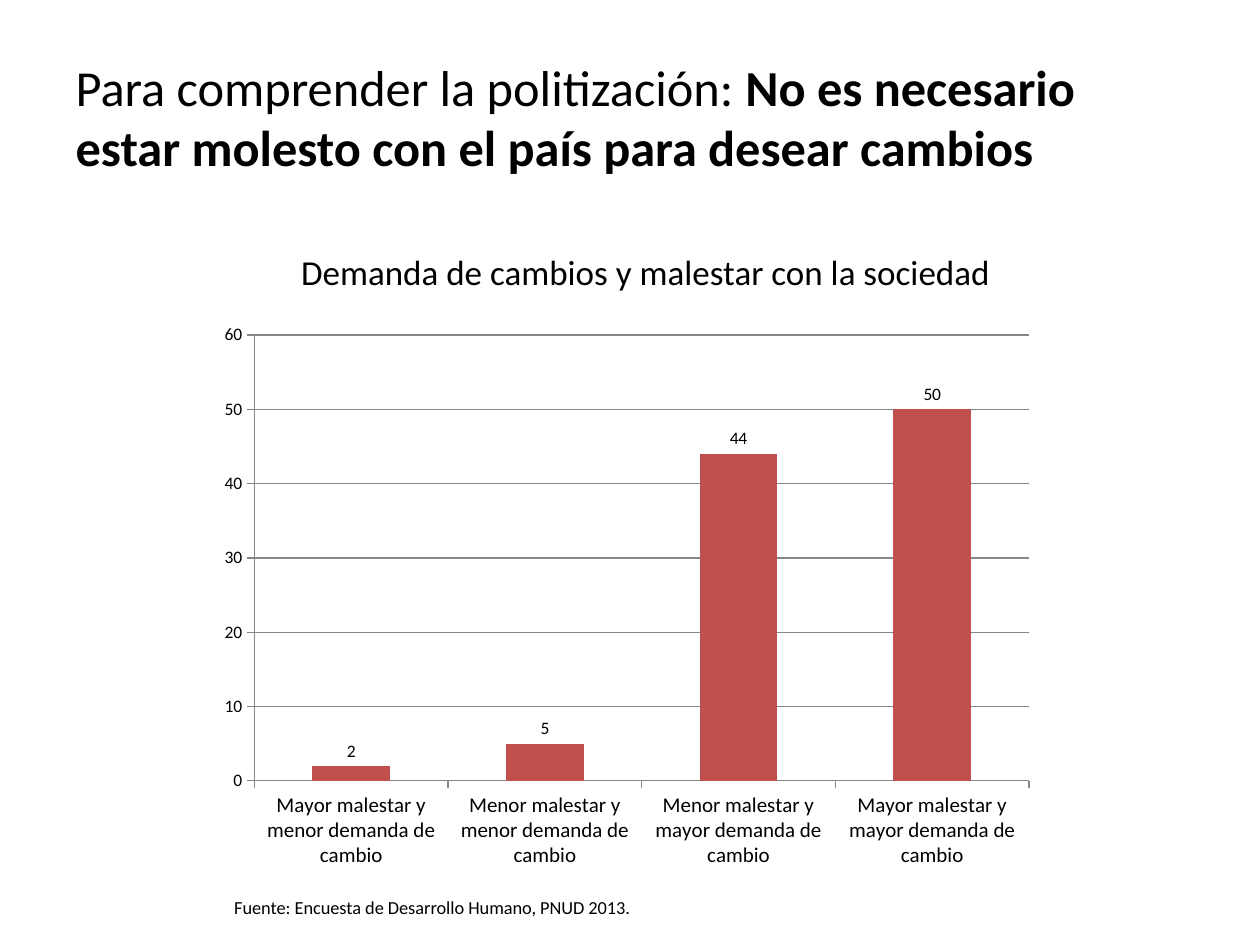
from dataclasses import dataclass

from pptx import Presentation
from pptx.chart.data import CategoryChartData
from pptx.dml.color import RGBColor
from pptx.enum.chart import XL_CHART_TYPE, XL_LABEL_POSITION, XL_TICK_MARK
from pptx.enum.text import MSO_ANCHOR, MSO_AUTO_SIZE, PP_ALIGN
from pptx.util import Inches, Pt

BLACK = RGBColor(0x00, 0x00, 0x00)
RED = RGBColor(0xC0, 0x50, 0x4D)
GRAY = RGBColor(0x86, 0x86, 0x86)
FONT = "Calibri"
COLUMN = XL_CHART_TYPE.COLUMN_CLUSTERED
ABOVE = XL_LABEL_POSITION.OUTSIDE_END
OUT = XL_TICK_MARK.OUTSIDE
NO_TICK = XL_TICK_MARK.NONE
LEFT, CENTER = PP_ALIGN.LEFT, PP_ALIGN.CENTER
MIDDLE = MSO_ANCHOR.MIDDLE
NO_FIT, GROW = MSO_AUTO_SIZE.NONE, MSO_AUTO_SIZE.SHAPE_TO_FIT_TEXT


@dataclass
class Box:
    left: float
    top: float
    width: float
    height: float

    def lengths(self) -> list:
        return [Inches(v) for v in (self.left, self.top, self.width, self.height)]


@dataclass
class Run:
    text: str
    size: float
    bold: bool = False


@dataclass
class Label:
    box: Box
    run: Run
    align: PP_ALIGN
    wrap: bool


TITLE = [
    Run("Para comprender la politización: ", 28.8),
    Run("No es necesario estar molesto con el país para desear cambios", 28.8, True),
]
LABELS = [
    Label(Box(0.91, 1.94, 8.43, 0.44),
          Run("Demanda de cambios y malestar con la sociedad", 20), CENTER, True),
    Label(Box(1.76, 7.06, 3.79, 0.28),
          Run("Fuente: Encuesta de Desarrollo Humano, PNUD 2013.", 10.5), LEFT, False),
]
BARS = {
    "Mayor malestar y menor demanda de cambio": 2,
    "Menor malestar y menor demanda de cambio": 5,
    "Menor malestar y mayor demanda de cambio": 44,
    "Mayor malestar y mayor demanda de cambio": 50,
}


def style(font, size: float, bold: bool = False) -> None:
    font.name = FONT
    font.size = Pt(size)
    font.bold = bold
    font.color.rgb = BLACK


def write(frame, runs: list[Run], align: PP_ALIGN) -> None:
    para = frame.paragraphs[0]
    para.alignment = align
    for item in runs:
        run = para.add_run()
        run.text = item.text
        style(run.font, item.size, item.bold)


def add_title(slide, box: Box, runs: list[Run]) -> None:
    title = slide.shapes.title
    title.left, title.top, title.width, title.height = box.lengths()
    frame = title.text_frame
    frame.auto_size = NO_FIT
    frame.vertical_anchor = MIDDLE
    write(frame, runs, LEFT)


def add_label(slide, label: Label) -> None:
    frame = slide.shapes.add_textbox(*label.box.lengths()).text_frame
    frame.word_wrap = label.wrap
    frame.auto_size = GROW
    write(frame, [label.run], label.align)


def set_line(line) -> None:
    line.color.rgb = GRAY
    line.width = Pt(0.75)


def add_bars(slide, box: Box, bars: dict[str, int]) -> None:
    data = CategoryChartData()
    data.categories = list(bars)
    data.add_series("Series 1", list(bars.values()))
    chart = slide.shapes.add_chart(COLUMN, *box.lengths(), data).chart
    chart.has_legend = False
    chart.has_title = False
    style(chart.font, 10)

    # Axes and grid
    for axis, size in ((chart.category_axis, 12), (chart.value_axis, 10)):
        style(axis.tick_labels.font, size)
        axis.major_tick_mark = OUT
        axis.minor_tick_mark = NO_TICK
        set_line(axis.format.line)
    scale = chart.value_axis
    scale.minimum_scale, scale.maximum_scale, scale.major_unit = 0, 60, 10
    scale.has_major_gridlines = True
    set_line(scale.major_gridlines.format.line)

    # Columns and their values
    plot = chart.plots[0]
    plot.gap_width = 150
    plot.vary_by_categories = False
    series = plot.series[0]
    series.format.fill.solid()
    series.format.fill.fore_color.rgb = RED
    labels = series.data_labels
    labels.show_value = True
    labels.position = ABOVE
    style(labels.font, 10)


def main() -> None:
    deck = Presentation()
    deck.slide_width, deck.slide_height = Inches(10), Inches(7.5)
    slide = deck.slides.add_slide(deck.slide_layouts[5])
    add_title(slide, Box(0.5, 0.3, 9, 1.25), TITLE)
    add_bars(slide, Box(1.65, 2.49, 6.65, 4.49), BARS)
    for label in LABELS:
        add_label(slide, label)
    deck.save("out.pptx")


if __name__ == "__main__":
    main()
